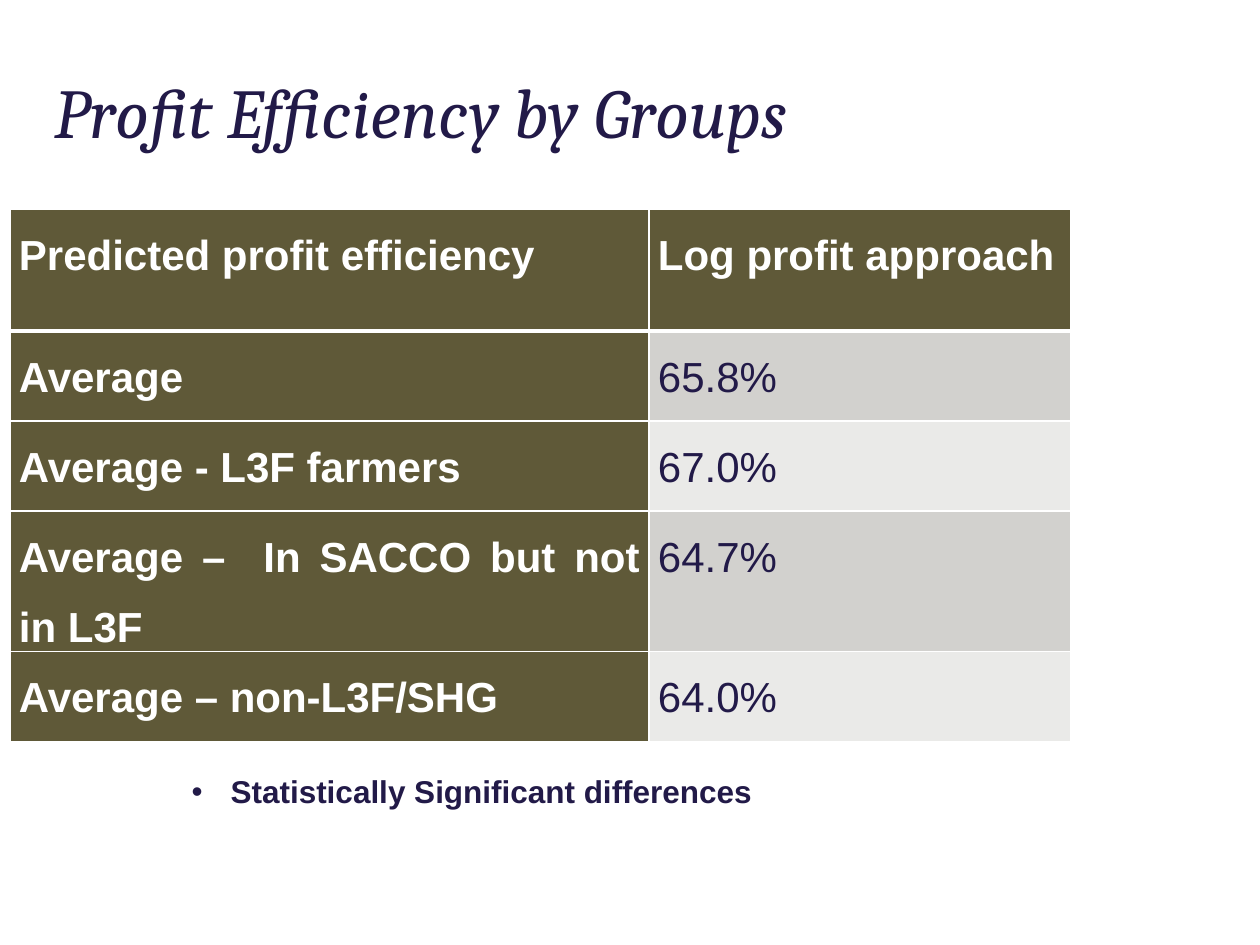
from lxml import etree
from pptx import Presentation
from pptx.dml.color import RGBColor
from pptx.enum.text import MSO_ANCHOR, MSO_AUTO_SIZE, PP_ALIGN
from pptx.oxml.ns import qn
from pptx.util import Emu, Pt

LEFT, JUSTIFY = PP_ALIGN.LEFT, PP_ALIGN.JUSTIFY
TOP, MIDDLE = MSO_ANCHOR.TOP, MSO_ANCHOR.MIDDLE
NO_AUTOFIT = MSO_AUTO_SIZE.NONE

EMU_PER_PX = 914400 / 126
NAVY = RGBColor(0x22, 0x1A, 0x48)
OLIVE = RGBColor(0x5F, 0x59, 0x38)
WHITE = RGBColor(0xFF, 0xFF, 0xFF)
BANDS = (RGBColor(0xD2, 0xD1, 0xCE), RGBColor(0xEA, 0xEA, 0xE8))

EFFICIENCY_ROWS = [
    ("Predicted profit efficiency", "Log profit approach"),
    ("Average", "65.8%"),
    ("Average - L3F farmers", "67.0%"),
    ("Average –  In SACCO but not in L3F", "64.7%"),
    ("Average – non-L3F/SHG", "64.0%"),
]
COLUMN_WIDTHS = (639, 422)
ROW_HEIGHTS = (122, 90, 90, 140, 90)


def px(value):
    return Emu(round(value * EMU_PER_PX))


class SlideBuilder:
    heading_font = "Cambria"
    body_font = "Arial"

    def __init__(self, presentation):
        self.slide = presentation.slides.add_slide(presentation.slide_layouts[1])

    def style(self, paragraph, name, size, color, bold=False, italic=False):
        font = paragraph.font
        font.name, font.size = name, Pt(size)
        font.bold, font.italic = bold, italic
        font.color.rgb = color

    def fill_placeholder(self, shape, text, box, anchor):
        shape.left, shape.top, shape.width, shape.height = map(px, box)
        frame = shape.text_frame
        frame.text = text
        frame.word_wrap = True
        frame.auto_size = NO_AUTOFIT
        frame.vertical_anchor = anchor
        paragraph = frame.paragraphs[0]
        paragraph.alignment = LEFT
        paragraph.space_before = Pt(0)
        return paragraph

    def title(self, text, box):
        paragraph = self.fill_placeholder(self.slide.shapes.title, text, box, MIDDLE)
        self.style(paragraph, self.heading_font, 40, NAVY, italic=True)

    def bullet(self, text, box, indent):
        paragraph = self.fill_placeholder(self.slide.placeholders[1], text, box, TOP)
        properties = paragraph._p.get_or_add_pPr()
        properties.set("marL", str(px(indent)))
        properties.set("indent", str(-px(indent)))
        etree.SubElement(properties, qn("a:buFont"), typeface=self.body_font)
        etree.SubElement(properties, qn("a:buChar"), char="•")
        self.style(paragraph, self.body_font, 18, NAVY, bold=True)

    def cell_borders(self, cell, widths):
        properties = cell._tc.get_or_add_tcPr()
        for side, width in zip("LRTB", widths):
            line = etree.SubElement(properties, qn(f"a:ln{side}"), w=str(Pt(width)))
            solid = etree.SubElement(line, qn("a:solidFill"))
            etree.SubElement(solid, qn("a:srgbClr"), val=str(WHITE))

    def cell(self, cell, text, row, column):
        is_header = row == 0 or column == 0
        # A thick rule parts the header row from the values.
        self.cell_borders(cell, (1, 1, 3 if row == 1 else 1, 3 if row == 0 else 1))
        cell.fill.solid()
        cell.fill.fore_color.rgb = OLIVE if is_header else BANDS[(row - 1) % 2]
        cell.margin_left = cell.margin_right = px(9)
        cell.margin_top = cell.margin_bottom = 0
        cell.text = text
        paragraph = cell.text_frame.paragraphs[0]
        paragraph.alignment = JUSTIFY
        paragraph.line_spacing = 1.5
        self.style(paragraph, self.body_font, 24,
                   WHITE if is_header else NAVY, bold=is_header)

    def table(self, rows, left, top, column_widths, row_heights):
        frame = self.slide.shapes.add_table(
            len(rows), len(column_widths), px(left), px(top),
            px(sum(column_widths)), px(sum(row_heights)))
        table = frame.table
        for column, width in zip(table.columns, column_widths):
            column.width = px(width)
        for row, height in zip(table.rows, row_heights):
            row.height = px(height)
        for r, texts in enumerate(rows):
            for c, text in enumerate(texts):
                self.cell(table.cell(r, c), text, r, c)


def main():
    presentation = Presentation()
    presentation.slide_width, presentation.slide_height = px(1260), px(945)
    builder = SlideBuilder(presentation)

    # Heading
    builder.title("Profit Efficiency by Groups", (42, 23, 1155, 174))
    # Efficiency by group
    builder.table(EFFICIENCY_ROWS, 10, 209, COLUMN_WIDTHS, ROW_HEIGHTS)
    # Remark below the table
    builder.bullet("Statistically Significant differences", (179, 766, 640, 50), 39)

    presentation.save("out.pptx")


if __name__ == "__main__":
    main()
